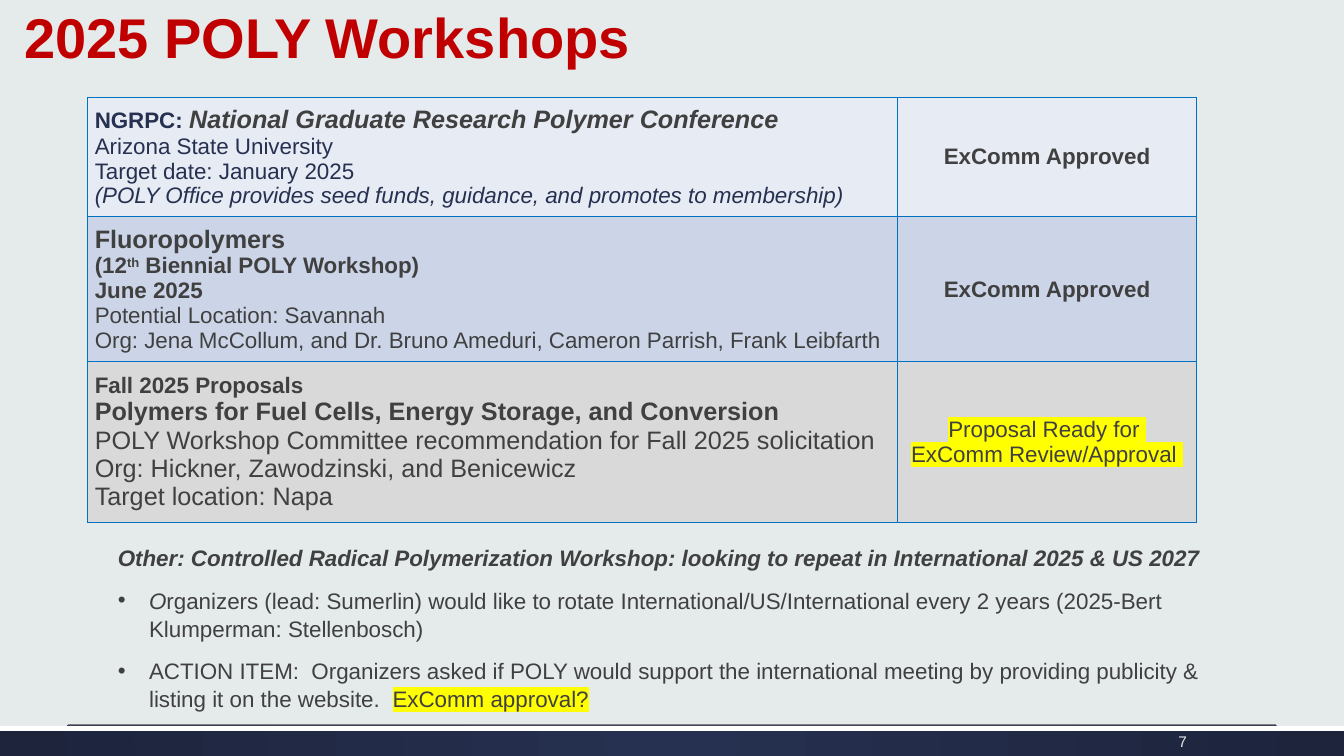
import pptx
import pptx.util
import pptx.dml.color
import pptx.enum.text
import pptx.enum.shapes
import pptx.oxml
import pptx.oxml.ns

Inches = pptx.util.Inches
Pt = pptx.util.Pt
ALIGN = pptx.enum.text.PP_ALIGN
ANCHOR = pptx.enum.text.MSO_ANCHOR
RECT = pptx.enum.shapes.MSO_SHAPE.RECTANGLE
LINE = pptx.enum.shapes.MSO_CONNECTOR.STRAIGHT

NAVY, GRAY, RED, BLUE = "263050", "404040", "C00000", "0070C0"
YELLOW = "FFFF00"

# A line is a list of runs: text, size, style (b bold, i italic, s superscript,
# h highlight), colour.
ROWS = [
    ("E7EBF4", 1.18, [
        [("NGRPC: ", 16, "b", NAVY),
         ("National Graduate Research Polymer Conference", 18, "bi", GRAY)],
        [("Arizona State University", 16, "", NAVY)],
        [("Target date: January 2025", 16, "", NAVY)],
        [("(POLY Office provides seed funds, guidance, and promotes to membership)",
          16, "i", NAVY)],
    ], [[("ExComm Approved", 16, "b", GRAY)]]),
    ("CCD5E8", 1.44, [
        [("Fluoropolymers", 18, "b", GRAY)],
        [("(12", 16, "b", GRAY), ("th", 16, "bs", GRAY),
         (" Biennial POLY Workshop)", 16, "b", GRAY)],
        [("June 2025", 16, "b", GRAY)],
        [("Potential Location: Savannah", 16, "", GRAY)],
        [("Org: Jena McCollum, and Dr. Bruno Ameduri, Cameron Parrish, Frank Leibfarth",
          16, "", GRAY)],
    ], [[("ExComm Approved", 16, "b", GRAY)]]),
    ("D9D9D9", 1.59, [
        [("Fall 2025 Proposals", 16, "b", GRAY)],
        [("Polymers for Fuel Cells, Energy Storage, and Conversion", 18, "b", GRAY)],
        [("POLY Workshop Committee recommendation for Fall 2025 solicitation",
          18, "", GRAY)],
        [("Org: Hickner, Zawodzinski, and Benicewicz", 18, "", GRAY)],
        [("Target location: Napa", 18, "", GRAY)],
    ], [[("Proposal Ready for ", 16, "h", GRAY)],
        [("ExComm Review/Approval ", 16, "h", GRAY)]]),
]

NOTES = [
    [("Other: Controlled Radical Polymerization Workshop: looking to repeat in "
      "International 2025 & US 2027", 16, "bi", GRAY)],
    [("O", 16, "i", GRAY),
     ("rganizers (lead: Sumerlin) would like to rotate International/US/International "
      "every 2 years (2025-Bert Klumperman: Stellenbosch)", 16, "", GRAY)],
    [("ACTION ITEM:  Organizers asked if POLY would support the international meeting "
      "by providing publicity & listing it on the website.  ", 16, "", GRAY),
     ("ExComm approval?", 16, "h", GRAY)],
]


def color(code):
    return pptx.dml.color.RGBColor.from_string(code)


def node(body):
    """Make an element in the drawing namespace from its markup."""
    tag, rest = body.split(" ", 1)
    return pptx.oxml.parse_xml(f"<{tag} {pptx.oxml.ns.nsdecls('a')} {rest}")


def add_run(para, text, size, style, tint):
    run = para.add_run()
    run.text = text
    font = run.font
    font.name, font.size = "Arial", Pt(size)
    font.bold, font.italic = "b" in style, "i" in style
    font.color.rgb = color(tint)
    props = run._r.get_or_add_rPr()
    if "s" in style:
        props.set("baseline", "30000")
    if "h" in style:
        mark = node(f'a:highlight ><a:srgbClr val="{YELLOW}"/></a:highlight>')
        props.find(pptx.oxml.ns.qn("a:solidFill")).addnext(mark)


def add_lines(frame, lines, align=ALIGN.LEFT):
    for i, line in enumerate(lines):
        para = frame.paragraphs[0] if i == 0 else frame.add_paragraph()
        para.alignment = align
        for run in line:
            add_run(para, *run)


def add_title(slide, left, top, width, height):
    title = slide.shapes.title
    title.left, title.top = Inches(left), Inches(top)
    title.width, title.height = Inches(width), Inches(height)
    frame = title.text_frame
    frame.word_wrap = True
    frame.auto_size = pptx.enum.text.MSO_AUTO_SIZE.NONE
    frame.vertical_anchor = ANCHOR.BOTTOM
    add_lines(frame, [[("2025 POLY Workshops", 40, "b", RED)]])
    frame.paragraphs[0].line_spacing = 0.9


def fill_cell(cell, lines, tint, align):
    cell.fill.solid()
    cell.fill.fore_color.rgb = color(tint)
    cell.vertical_anchor = ANCHOR.MIDDLE
    cell.margin_left = cell.margin_right = Inches(0.07)
    cell.margin_top = cell.margin_bottom = 0
    add_lines(cell.text_frame, lines, align)
    props = cell._tc.get_or_add_tcPr()
    for i, side in enumerate("LRTB"):
        props.insert(i, node(f'a:ln{side} w="{Pt(1)}"><a:solidFill>'
                             f'<a:srgbClr val="{BLUE}"/></a:solidFill></a:ln{side}>'))


def add_grid(slide, left, top, width, height):
    table = slide.shapes.add_table(len(ROWS), 2, Inches(left), Inches(top),
                                   Inches(width), Inches(height)).table
    table.first_row = table.horz_banding = False
    first = 8.03
    table.columns[0].width = Inches(first)
    table.columns[1].width = Inches(width - first)
    for i, (tint, tall, topic, status) in enumerate(ROWS):
        table.rows[i].height = Inches(tall)
        fill_cell(table.cell(i, 0), topic, tint, ALIGN.LEFT)
        fill_cell(table.cell(i, 1), status, tint, ALIGN.CENTER)


def add_notes(slide, left, top, width, height):
    box = slide.shapes.add_textbox(Inches(left), Inches(top), Inches(width), Inches(height))
    frame = box.text_frame
    frame.word_wrap = True
    add_lines(frame, NOTES)
    for i, para in enumerate(frame.paragraphs):
        para.space_after = Pt(10)
        para.line_spacing = 1.05
        if i:
            props = para._p.get_or_add_pPr()
            props.set("marL", str(Inches(0.31)))
            props.set("indent", str(-Inches(0.31)))
            props.append(node('a:buFont typeface="Arial"/>'))
            props.append(node('a:buChar char="•"/>'))


def add_bar(slide, left, top, width, height, tint):
    bar = slide.shapes.add_shape(RECT, Inches(left), Inches(top), Inches(width), Inches(height))
    bar.shadow.inherit = False
    bar.fill.solid()
    bar.fill.fore_color.rgb = color(tint)
    bar.line.fill.background()
    return bar


def add_foot(slide, left, top, width, height):
    band = add_bar(slide, left, top, width, height, NAVY)
    glow = node('a:gradFill rotWithShape="1"><a:gsLst>'
                f'<a:gs pos="0"><a:srgbClr val="{NAVY}"/></a:gs>'
                '<a:gs pos="100000"><a:srgbClr val="1D243C"/></a:gs></a:gsLst>'
                '<a:path path="circle"><a:fillToRect l="50000" t="50000" r="50000" b="50000"/>'
                '</a:path></a:gradFill>')
    flat = band._element.spPr.find(pptx.oxml.ns.qn("a:solidFill"))
    flat.getparent().replace(flat, glow)
    add_bar(slide, left, top, width, 0.05, "FFFFFF")

    rule = slide.shapes.add_connector(LINE, Inches(left + 0.67), Inches(top - 0.01),
                                      Inches(left + width - 0.67), Inches(top - 0.01))
    rule.line.color.rgb = color("7F7F7F")
    rule.line.width = Pt(0.5)
    rule._element.spPr.append(node("a:effectLst />"))

    page = slide.shapes.add_textbox(Inches(left + 11.17), Inches(top + 0.03),
                                    Inches(0.7), Inches(0.26))
    frame = page.text_frame
    frame.word_wrap = True
    frame.margin_top = frame.margin_bottom = 0
    frame.vertical_anchor = ANCHOR.MIDDLE
    add_lines(frame, [[("7", 11, "", "E5E8E8")]], ALIGN.RIGHT)


def main():
    deck = pptx.Presentation()
    deck.slide_width, deck.slide_height = Inches(13.33), Inches(7.5)
    slide = deck.slides.add_slide(deck.slide_layouts[5])
    slide.background.fill.solid()
    slide.background.fill.fore_color.rgb = color("E5EAEA")
    add_foot(slide, 0, 7.2, 13.33, 0.3)
    add_grid(slide, 0.87, 0.97, 11, 4.21)
    add_notes(slide, 1.07, 5.34, 11.19, 1.73)
    add_title(slide, 0.14, 0.14, 12.15, 0.61)
    deck.save("out.pptx")


if __name__ == "__main__":
    main()
